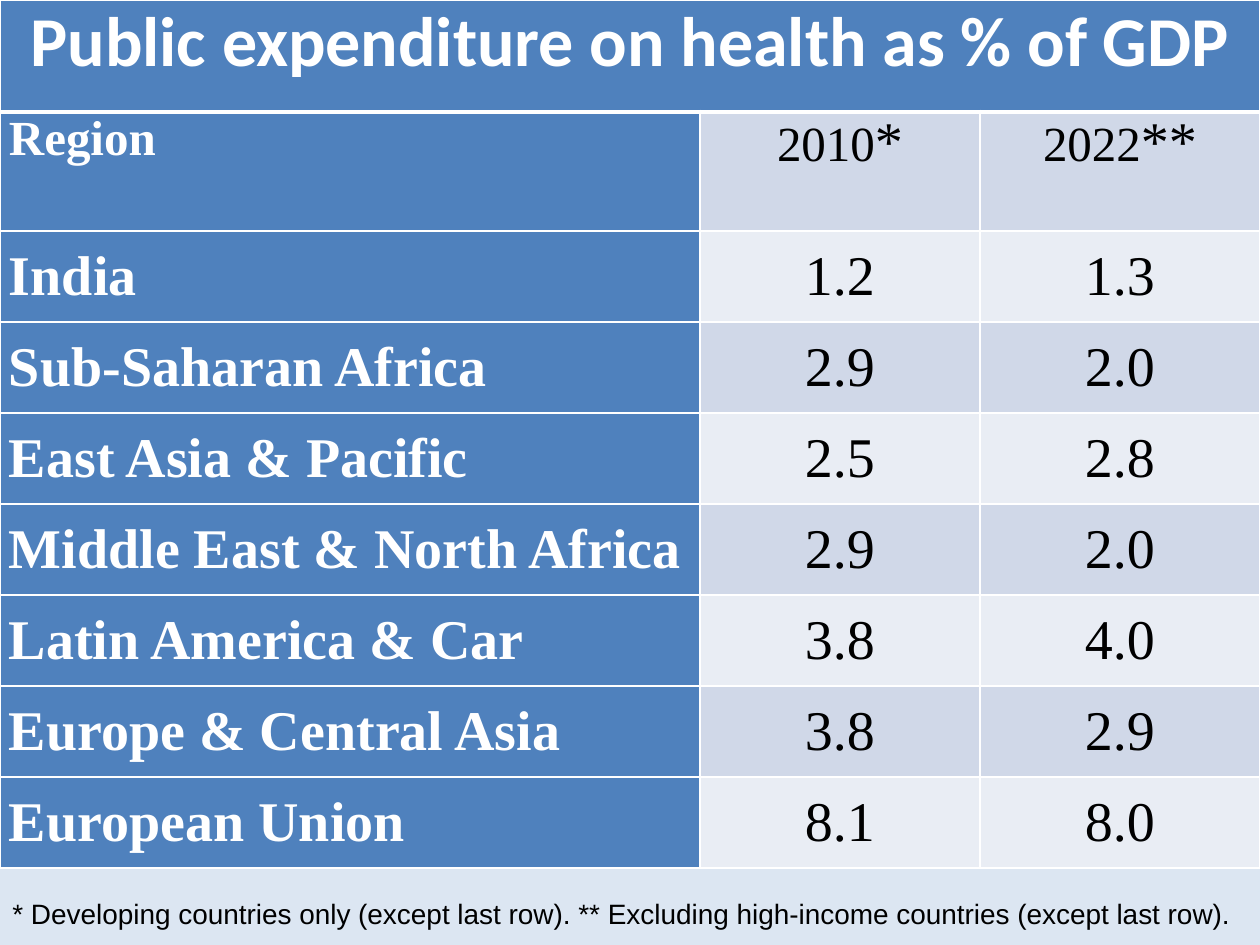
from dataclasses import dataclass

from lxml import etree
from pptx import Presentation
from pptx import util as u
from pptx.dml.color import RGBColor
from pptx.enum import text
from pptx.oxml.ns import qn

PX = u.Inches(1) / 126
WHITE, BLACK, BLUE = "FFFFFF", "000000", "4F81BD"
BANDS = ("D0D8E8", "E9EDF4")
SERIF = "Times New Roman"
COLUMNS = (700, 280, 280)
TITLE_HEIGHT, HEADER_HEIGHT, ROW_HEIGHT = 112, 119, 91


@dataclass(frozen=True)
class Run:
    words: str
    size: int
    color: str = BLACK
    font: str = SERIF
    bold: bool = False


@dataclass(frozen=True)
class Region:
    name: str
    first: str
    second: str


REGIONS = (
    Region("India", "1.2", "1.3"),
    Region("Sub-Saharan Africa", "2.9", "2.0"),
    Region("East Asia & Pacific", "2.5", "2.8"),
    Region("Middle East & North Africa", "2.9", "2.0"),
    Region("Latin America & Car", "3.8", "4.0"),
    Region("Europe & Central Asia", "3.8", "2.9"),
    Region("European Union", "8.1", "8.0"),
)


def px(value: int) -> int:
    return round(value * PX)


def color(value: str) -> RGBColor:
    return RGBColor.from_string(value)


def add_runs(paragraph, runs: list[Run]) -> None:
    for item in runs:
        run = paragraph.add_run()
        run.text = item.words
        run.font.size = u.Pt(item.size)
        run.font.name = item.font
        run.font.bold = item.bold
        run.font.color.rgb = color(item.color)


def set_borders(cell, top: int, bottom: int) -> None:
    properties = cell._tc.get_or_add_tcPr()
    for side, width in (("L", 1), ("R", 1), ("T", top), ("B", bottom)):
        line = etree.SubElement(properties, qn(f"a:ln{side}"), w=str(u.Pt(width)))
        fill = etree.SubElement(line, qn("a:solidFill"))
        etree.SubElement(fill, qn("a:srgbClr"), val=WHITE)


def fill_cell(cell, runs: list[Run], background: str, centered: bool, middle: bool) -> None:
    cell.fill.solid()
    cell.fill.fore_color.rgb = color(background)
    cell.margin_left = cell.margin_right = px(9)
    cell.margin_top = cell.margin_bottom = 0
    cell.vertical_anchor = text.MSO_ANCHOR.MIDDLE if middle else text.MSO_ANCHOR.TOP
    paragraph = cell.text_frame.paragraphs[0]
    paragraph.alignment = text.PP_ALIGN.CENTER if centered else text.PP_ALIGN.LEFT
    paragraph.space_before = paragraph.space_after = u.Pt(6)
    add_runs(paragraph, runs)


def add_expenditure_table(slide) -> None:
    heights = [TITLE_HEIGHT, HEADER_HEIGHT] + [ROW_HEIGHT] * len(REGIONS)
    frame = slide.shapes.add_table(
        len(heights), len(COLUMNS), 0, 0, px(sum(COLUMNS)), px(sum(heights)))
    table = frame.table
    for column, width in zip(table.columns, COLUMNS):
        column.width = px(width)
    for index, height in enumerate(heights):
        table.rows[index].height = px(height)
        for cell in table.rows[index].cells:
            set_borders(cell, top=3 if index == 1 else 1, bottom=3 if index == 0 else 1)

    # Title across all columns
    table.cell(0, 0).merge(table.cell(0, len(COLUMNS) - 1))
    title = Run("Public expenditure on health as % of GDP", 40, WHITE, "Calibri", True)
    fill_cell(table.cell(0, 0), [title], BLUE, centered=True, middle=False)

    # Column headings, then one row per region
    rows = [[[Run("Region", 28, WHITE, bold=True)],
             [Run("2010", 28), Run("*", 32)],
             [Run("2022", 28), Run("**", 32)]]]
    rows += [[[Run(region.name, 32, WHITE, bold=True)],
              [Run(region.first, 32)],
              [Run(region.second, 32)]] for region in REGIONS]
    for row, contents in enumerate(rows):
        for column, runs in enumerate(contents):
            background = BANDS[row % 2] if column else BLUE
            fill_cell(table.cell(row + 1, column), runs, background,
                      centered=column > 0, middle=row > 0)


def add_footnote(slide) -> None:
    box = slide.shapes.add_textbox(0, px(890), px(1260), px(47))
    box.text_frame.word_wrap = True
    note = ("* Developing countries only (except last row). "
            "** Excluding high-income countries (except last row).")
    add_runs(box.text_frame.paragraphs[0], [Run(note, 16, font="Arial")])


def main() -> None:
    presentation = Presentation()
    presentation.slide_width, presentation.slide_height = px(1260), px(945)
    slide = presentation.slides.add_slide(presentation.slide_layouts[6])
    slide.background.fill.solid()
    slide.background.fill.fore_color.rgb = color("DCE6F2")
    add_expenditure_table(slide)
    add_footnote(slide)
    presentation.save("out.pptx")


if __name__ == "__main__":
    main()
